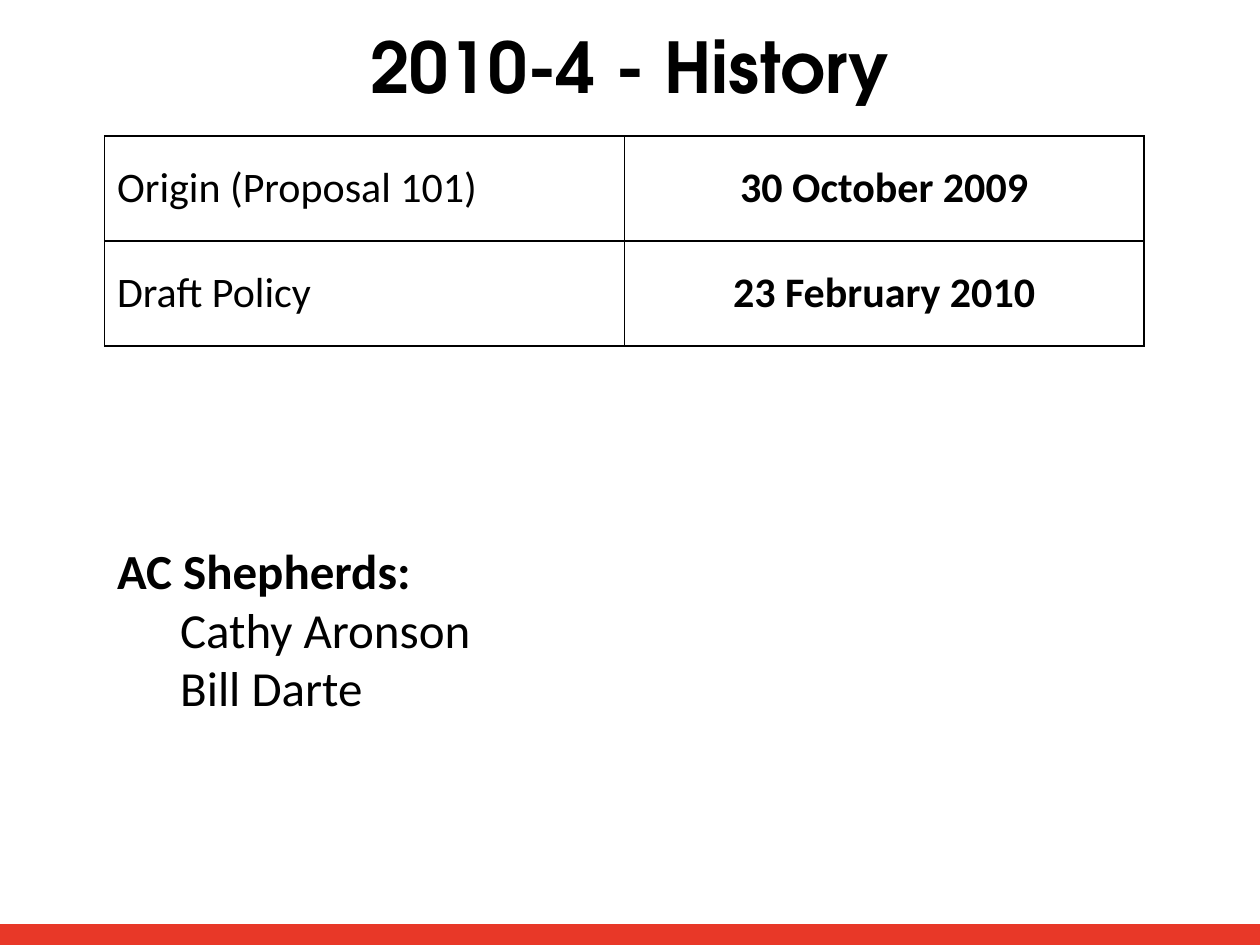
from lxml.etree import SubElement
from pptx import Presentation
from pptx.dml.color import RGBColor
from pptx.enum.shapes import MSO_SHAPE
from pptx.enum.text import MSO_ANCHOR, MSO_AUTO_SIZE, PP_ALIGN
from pptx.oxml.ns import qn
from pptx.util import Inches, Pt

WIDTH, HEIGHT = Inches(10), Inches(7.5)
COLORS = {"text": "000000", "paper": "FFFFFF", "band": "E83828"}
HEADING_FONT, BODY_FONT = "TeX Gyre Adventor", "Calibri"
HISTORY = [
    ("Origin (Proposal 101)", "30 October 2009"),
    ("Draft Policy", "23 February 2010"),
]
SHEPHERDS = ["Cathy Aronson", "Bill Darte"]


def share(left, top, width, height):
    """Turn shares of the slide's size into a box."""
    return (int(WIDTH * left), int(HEIGHT * top),
            int(WIDTH * width), int(HEIGHT * height))


def place(shape, box):
    """Move a shape into a box."""
    shape.left, shape.top, shape.width, shape.height = box


def write(paragraph, text, size=24, font=BODY_FONT, bold=False,
          align=PP_ALIGN.LEFT, indent=0):
    """Fill a paragraph with formatted text and no bullet."""
    paragraph.alignment = align
    paragraph.space_before = Pt(0)
    properties = paragraph._p.get_or_add_pPr()
    properties.set("marL", str(int(indent)))
    properties.set("indent", "0")
    SubElement(properties, qn("a:buNone"))
    run = paragraph.add_run()
    run.text = text
    run.font.size = Pt(size)
    run.font.name = font
    run.font.bold = bold
    run.font.color.rgb = RGBColor.from_string(COLORS["text"])


def border(cell):
    """Draw a thin line on each side of a cell."""
    properties = cell._tc.get_or_add_tcPr()
    for position, side in enumerate(("a:lnL", "a:lnR", "a:lnT", "a:lnB")):
        line = properties.makeelement(qn(side), {"w": str(Pt(1))})
        properties.insert(position, line)
        fill = SubElement(line, qn("a:solidFill"))
        SubElement(fill, qn("a:srgbClr"), val=COLORS["text"])


def add_band(slide, box):
    """Add the coloured band at the foot."""
    band = slide.shapes.add_shape(MSO_SHAPE.RECTANGLE, *box)
    band.shadow.inherit = False
    band.fill.solid()
    band.fill.fore_color.rgb = RGBColor.from_string(COLORS["band"])
    band.line.fill.background()


def add_title(slide, box, text):
    """Set the title in its placeholder."""
    title = slide.shapes.title
    place(title, box)
    frame = title.text_frame
    frame.auto_size = MSO_AUTO_SIZE.NONE
    frame.vertical_anchor = MSO_ANCHOR.MIDDLE
    write(frame.paragraphs[0], text, size=40, font=HEADING_FONT, bold=True,
          align=PP_ALIGN.CENTER)


def add_history(slide, box, rows):
    """Add the table of events and dates."""
    table = slide.shapes.add_table(len(rows), len(rows[0]), *box).table
    for row_index, row in enumerate(rows):
        for column_index, text in enumerate(row):
            cell = table.cell(row_index, column_index)
            cell.vertical_anchor = MSO_ANCHOR.MIDDLE
            cell.fill.solid()
            cell.fill.fore_color.rgb = RGBColor.from_string(COLORS["paper"])
            border(cell)
            is_date = column_index == 1
            write(cell.text_frame.paragraphs[0], text, bold=is_date,
                  align=PP_ALIGN.CENTER if is_date else PP_ALIGN.LEFT)


def add_shepherds(slide, box, heading, names):
    """Set the heading and the indented names in the body placeholder."""
    body = slide.placeholders[1]
    place(body, box)
    frame = body.text_frame
    frame.auto_size = MSO_AUTO_SIZE.NONE
    frame.vertical_anchor = MSO_ANCHOR.TOP
    write(frame.paragraphs[0], heading, size=28, bold=True)
    for name in names:
        write(frame.add_paragraph(), name, size=28, indent=Inches(0.5))


def main():
    """Build and save the slide."""
    presentation = Presentation()
    presentation.slide_width, presentation.slide_height = WIDTH, HEIGHT
    slide = presentation.slides.add_slide(presentation.slide_layouts[1])
    add_band(slide, share(0, 0.978, 1, 0.022))
    add_history(slide, share(0.083, 0.144, 0.825, 0.222), HISTORY)
    add_shepherds(slide, share(0.083, 0.565, 0.408, 0.201),
                  "AC Shepherds:", SHEPHERDS)
    add_title(slide, share(0.05, 0.017, 0.9, 0.104), "2010-4 - History")
    presentation.save("out.pptx")


if __name__ == "__main__":
    main()
